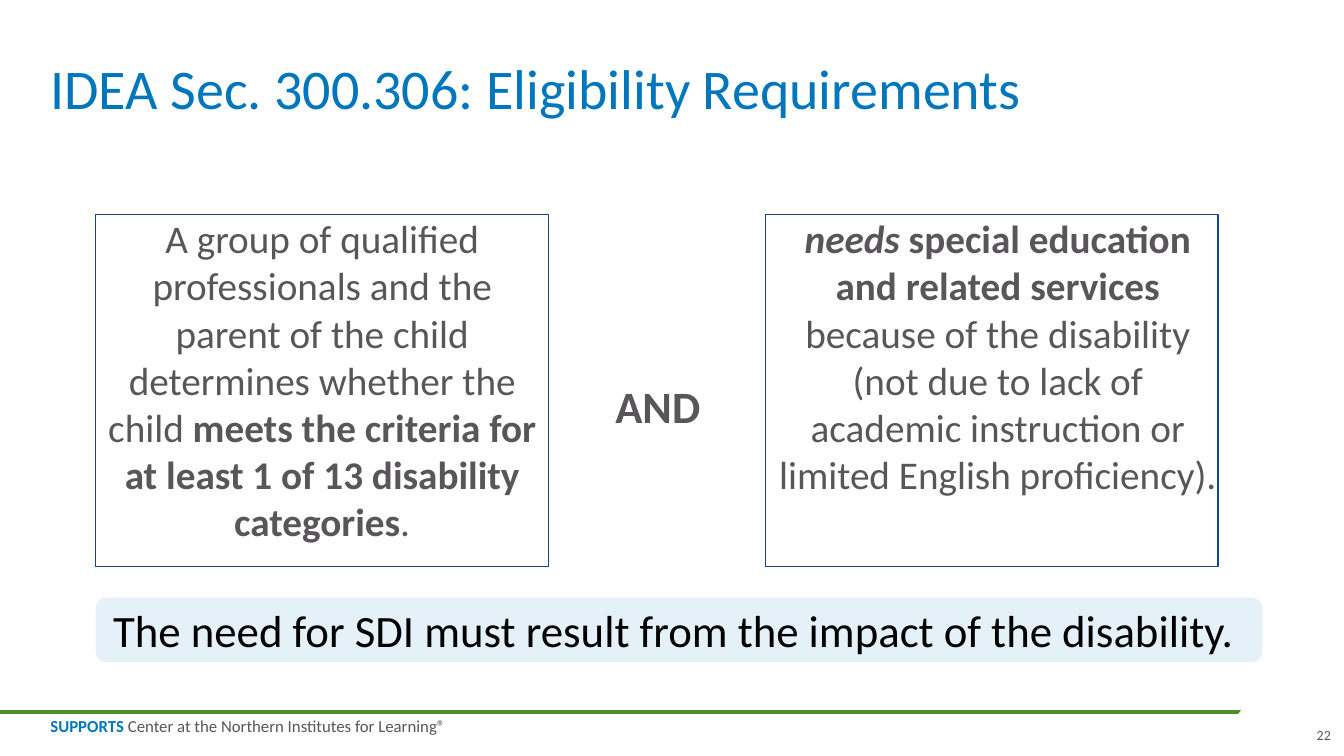
from dataclasses import dataclass
from pptx import Presentation
from pptx.dml.color import RGBColor
from pptx.enum import shapes, text
from pptx.oxml.ns import qn
from pptx.util import Inches, Pt


@dataclass(frozen=True)
class Theme:
    font: str = "Calibri"
    blue: str = "0076BD"
    gray: str = "59565A"
    black: str = "000000"
    white: str = "FFFFFF"
    border: str = "164194"
    pale: str = "E5F1F8"
    green: str = "4C902D"
    title: int = 40
    emphasis: int = 32
    body: int = 28
    footer: int = 12
    number: int = 10


THEME = Theme()

# Each run is (wording, style); style letters: b bold, i italic
TITLE = [("IDEA Sec. 300.306: Eligibility Requirements", "")]
# Each requirement: left inset, runs
REQUIREMENTS = [
    (0, [
        ("A group of qualified professionals and the parent of the child "
         "determines whether the child ", ""),
        ("meets the criteria for at least 1 of 13 disability categories", "b"),
        (".", ""),
    ]),
    (0.12, [
        ("needs ", "bi"),
        ("special education and related services ", "b"),
        ("because of the disability (not due to lack of academic instruction "
         "or limited English proficiency). ", ""),
    ]),
]
JOINER = [("AND", "b")]
CONCLUSION = [("The need for SDI must result from the impact of the disability. ", "")]
CENTER = [("SUPPORTS", "b")]
INSTITUTE = [(" Center at the Northern Institutes for Learning®", "")]
PAGE_NUMBER = [("22", "")]

LEFT, BOX_TOP, BOX_WIDTH, BOX_HEIGHT, BOX_PITCH = 0.95, 2.13, 4.49, 3.49, 6.64
ALIGN, ANCHOR = text.PP_ALIGN, text.MSO_ANCHOR


def color(code):
    return RGBColor.from_string(code)


def add_runs(para, runs, size, ink):
    for wording, style in runs:
        span = para.add_run()
        span.text = wording
        span.font.name = THEME.font
        span.font.size = Pt(size)
        span.font.color.rgb = color(ink)
        span.font.bold = "b" in style
        span.font.italic = "i" in style


def write(shape, runs, size, ink, align=ALIGN.LEFT, anchor=ANCHOR.TOP,
          margins=(0, 0, 0, 0), wrap=True):
    """Fill the first paragraph; margins are left, top, right, bottom in inches."""
    frame = shape.text_frame
    frame.word_wrap = wrap
    frame.auto_size = text.MSO_AUTO_SIZE.NONE
    frame.vertical_anchor = anchor
    (frame.margin_left, frame.margin_top,
     frame.margin_right, frame.margin_bottom) = map(Inches, margins)
    para = frame.paragraphs[0]
    para.alignment = align
    add_runs(para, runs, size, ink)
    return para


def add_panel(page, kind, place, fill, border=None):
    panel = page.shapes.add_shape(kind, *map(Inches, place))
    panel.shadow.inherit = False
    panel.fill.solid()
    panel.fill.fore_color.rgb = color(fill)
    if border:
        panel.line.color.rgb = color(border)
        panel.line.width = Pt(1)
    else:
        panel.line.fill.background()
    return panel


def add_label(page, place):
    return page.shapes.add_textbox(*map(Inches, place))


def add_footer(page):
    rule = page.shapes.add_connector(
        shapes.MSO_CONNECTOR.STRAIGHT, 0, Inches(7.06), Inches(13), Inches(7.06))
    rule.line.color.rgb = color(THEME.green)
    rule.line.width = Pt(3)
    properties = rule._element.spPr
    properties.append(properties.makeelement(qn("a:effectLst"), {}))

    label = add_label(page, (0.5, 7.13, 4.02, 0.17))
    para = write(label, CENTER, THEME.footer, THEME.blue, wrap=False)
    para.line_spacing = 0.85
    add_runs(para, INSTITUTE, THEME.footer, THEME.gray)

    rule_end = add_panel(page, shapes.MSO_SHAPE.OVAL,
                         (12.16, 6.77, 1.19, 0.58), THEME.white)
    rule_end.rotation = 332.1
    number = add_label(page, (13.03, 7.2, 0.17, 0.17))
    write(number, PAGE_NUMBER, THEME.number, THEME.gray,
          ALIGN.RIGHT, ANCHOR.BOTTOM, wrap=False)


def add_title(page):
    title = page.shapes.title
    title.left, title.top, title.width, title.height = map(Inches, (0.5, 0, 12.4, 1.21))
    para = write(title, TITLE, THEME.title, THEME.blue, anchor=ANCHOR.BOTTOM)
    para.line_spacing = 0.9


def add_requirements(page):
    for index, (inset, runs) in enumerate(REQUIREMENTS):
        place = (LEFT + index * BOX_PITCH, BOX_TOP, BOX_WIDTH, BOX_HEIGHT)
        box = add_panel(page, shapes.MSO_SHAPE.RECTANGLE, place,
                        THEME.white, THEME.border)
        write(box, runs, THEME.body, THEME.gray, ALIGN.CENTER,
              margins=(inset, 0, 0, 0))
    joiner = add_label(page, (5.69, 3.71, 1.67, 0.64))
    write(joiner, JOINER, THEME.emphasis, THEME.gray, ALIGN.CENTER,
          margins=(0.1, 0.05, 0.1, 0.05))


def add_conclusion(page):
    banner = add_panel(page, shapes.MSO_SHAPE.ROUNDED_RECTANGLE,
                       (LEFT, 5.93, 11.57, 0.64), THEME.pale)
    write(banner, CONCLUSION, THEME.emphasis, THEME.black, ALIGN.CENTER,
          ANCHOR.MIDDLE, (0.1, 0.05, 0.1, 0.05))


def main():
    deck = Presentation()
    deck.slide_width, deck.slide_height = Inches(13.33), Inches(7.5)
    page = deck.slides.add_slide(deck.slide_layouts.get_by_name("Title Only"))
    add_footer(page)
    add_title(page)
    add_requirements(page)
    add_conclusion(page)
    deck.save("out.pptx")


if __name__ == "__main__":
    main()
